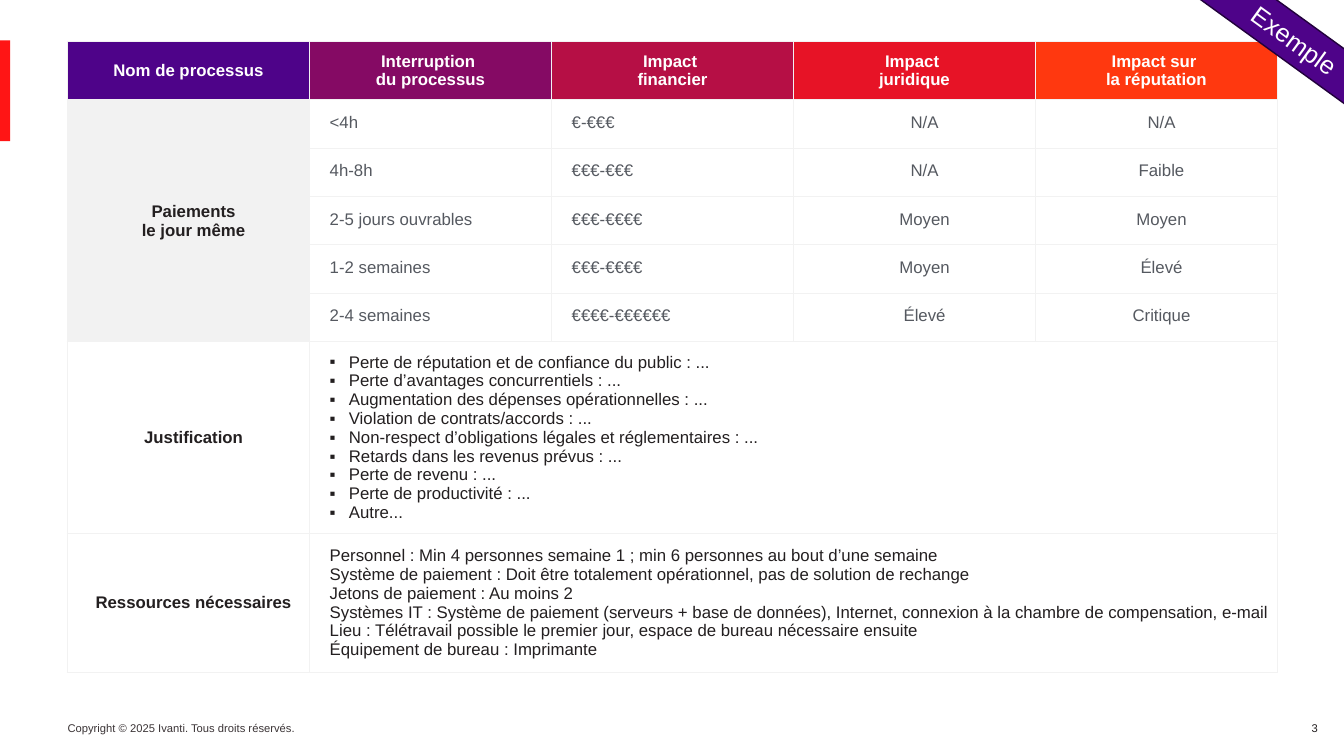
from copy import deepcopy

from pptx import Presentation
from pptx import util as u
from pptx.dml.color import RGBColor
from pptx.enum import shapes, text
from pptx.oxml import parse_xml
from pptx.oxml.ns import nsdecls, qn

LEFT, MID, RIGHT = text.PP_ALIGN.LEFT, text.PP_ALIGN.CENTER, text.PP_ALIGN.RIGHT
WHITE, INK, GREY, PALE, PLUM = "FFFFFF", "231F20", "555960", "F2F2F2", "4E0389"

HEADS = [
    ("Nom de processus", PLUM),
    ("Interruption \ndu processus", "850A64"),
    ("Impact \nfinancier", "B60F45"),
    ("Impact \njuridique", "E71326"),
    ("Impact sur \nla réputation", "FF380F"),
]
LEVELS = [
    ("<4h", "€-€€€", "N/A", "N/A"),
    ("4h-8h", "€€€-€€€", "N/A", "Faible"),
    ("2-5 jours ouvrables", "€€€-€€€€", "Moyen", "Moyen"),
    ("1-2 semaines", "€€€-€€€€", "Moyen", "Élevé"),
    ("2-4 semaines", "€€€€-€€€€€€", "Élevé", "Critique"),
]
CAUSES = [
    "Perte de réputation et de confiance du public : ...",
    "Perte d’avantages concurrentiels : ...",
    "Augmentation des dépenses opérationnelles : ...",
    "Violation de contrats/accords : ...",
    "Non-respect d’obligations légales et réglementaires : ...",
    "Retards dans les revenus prévus : ...",
    "Perte de revenu : ...",
    "Perte de productivité : ...",
    "Autre...",
]
NEEDS = """Personnel : Min 4 personnes semaine 1 ; min 6 personnes au bout d’une semaine
Système de paiement : Doit être totalement opérationnel, pas de solution de rechange
Jetons de paiement : Au moins 2
Systèmes IT : Système de paiement (serveurs + base de données), Internet, connexion à la chambre de compensation, e-mail
Lieu : Télétravail possible le premier jour, espace de bureau nécessaire ensuite
Équipement de bureau : Imprimante"""


def color(code):
    return RGBColor.from_string(code)


def write(frame, lines, size=12, ink=INK, bold=False, align=LEFT,
          lead=None, after=0, mark=None):
    for i, line in enumerate(lines):
        para = frame.paragraphs[0] if i == 0 else frame.add_paragraph()
        para.text = line
        para.alignment = align
        para.space_after = u.Pt(after)
        if lead:
            para.line_spacing = u.Pt(lead)
        if mark:
            props = para._p.get_or_add_pPr()
            props.set("marL", str(u.Inches(0.19)))
            props.set("indent", str(u.Inches(-0.19)))
            props.append(parse_xml(f'<a:buFont {nsdecls("a")} typeface="Arial"/>'))
            props.append(parse_xml(f'<a:buChar {nsdecls("a")} char="{mark}"/>'))
        for run in para.runs:
            font = run.font
            font.name, font.size, font.bold = "Arial", u.Pt(size), bold
            font.color.rgb = color(ink)
        for gap in para._p.findall(qn("a:br")):
            gap.append(deepcopy(para.runs[0]._r.rPr))


class Page:
    def __init__(self, deck):
        self.slide = deck.slides.add_slide(deck.slide_layouts[6])
        self.items = self.slide.shapes

    def label(self, line, box, wrap=True, **style):
        frame = self.items.add_textbox(*map(u.Inches, box)).text_frame
        frame.word_wrap = wrap
        frame.margin_left = 0
        write(frame, [line], size=8, **style)

    def block(self, box, fill, edge=None, turn=0):
        item = self.items.add_shape(shapes.MSO_SHAPE.RECTANGLE, *map(u.Inches, box))
        item.shadow.inherit = False
        item.rotation = turn
        item.fill.solid()
        item.fill.fore_color.rgb = color(fill)
        if edge:
            item.line.color.rgb = color(edge)
            item.line.width = u.Pt(1)
        else:
            item.line.fill.background()
        return item

    def table(self, box, cols, rows):
        grid = self.items.add_table(len(rows), len(cols), *map(u.Inches, box)).table
        grid.first_row = grid.horz_banding = False
        for col, width in zip(grid.columns, cols):
            col.width = u.Inches(width)
        for row, height in zip(grid.rows, rows):
            row.height = u.Inches(height)
        for cell in grid.iter_cells():
            props = cell._tc.get_or_add_tcPr()
            for side in ("lnL", "lnR", "lnT", "lnB"):
                props.append(parse_xml(
                    f'<a:{side} {nsdecls("a")} w="12700"><a:solidFill>'
                    f'<a:srgbClr val="{PALE}"/></a:solidFill></a:{side}>'))
            cell.fill.solid()
            cell.fill.fore_color.rgb = color(WHITE)
        return grid

    def cell(self, cell, lines, fill=WHITE, inset=0, **style):
        cell.fill.fore_color.rgb = color(fill)
        cell.vertical_anchor = text.MSO_ANCHOR.MIDDLE
        cell.margin_left = u.Inches(inset)
        cell.margin_top = cell.margin_right = cell.margin_bottom = 0
        write(cell.text_frame, lines, **style)


def main():
    deck = Presentation()
    deck.slide_width, deck.slide_height = u.Inches(13.33), u.Inches(7.5)
    page = Page(deck)

    page.label("Copyright © 2025 Ivanti. Tous droits réservés.",
               (0.67, 7.11, 2.4, 0.24), wrap=False, ink="3B3436")
    page.block((0, 0.4, 0.1, 1), "FF1515")
    page.label("3", (12.69, 7.11, 0.48, 0.24), align=RIGHT)

    rows = [0.58] + [0.48] * len(LEVELS) + [1.9, 1.38]
    grid = page.table((0.67, 0.41, 12, 6.24), [2.4] * 5, rows)
    grid.cell(1, 0).merge(grid.cell(5, 0))
    for row in (6, 7):
        grid.cell(row, 1).merge(grid.cell(row, 4))

    for col, (head, fill) in enumerate(HEADS):
        page.cell(grid.cell(0, col), [head], fill, ink=WHITE, bold=True,
                  align=MID, after=6.8 if col else 0)
    for row, level in enumerate(LEVELS, 1):
        for col, value in enumerate(level, 1):
            page.cell(grid.cell(row, col), [value], inset=0.1 if col == 4 else 0.2,
                      ink=GREY, align=MID if col > 2 else LEFT, lead=11.2, after=6.8)
    for row, name, fill in ((1, "Paiements\nle jour même", PALE),
                            (6, "Justification", WHITE),
                            (7, "Ressources nécessaires", WHITE)):
        page.cell(grid.cell(row, 0), [name], fill, inset=0.1, bold=True, align=MID)
    page.cell(grid.cell(6, 1), CAUSES, inset=0.2, mark="▪")
    page.cell(grid.cell(7, 1), [NEEDS], inset=0.2)

    ribbon = page.block((11.56, 0.18, 2.56, 0.44), PLUM, edge="22013C", turn=35.9)
    ribbon.text_frame.vertical_anchor = text.MSO_ANCHOR.MIDDLE
    write(ribbon.text_frame, ["Exemple"], size=18, ink=WHITE, align=MID)

    deck.save("out.pptx")


if __name__ == "__main__":
    main()
